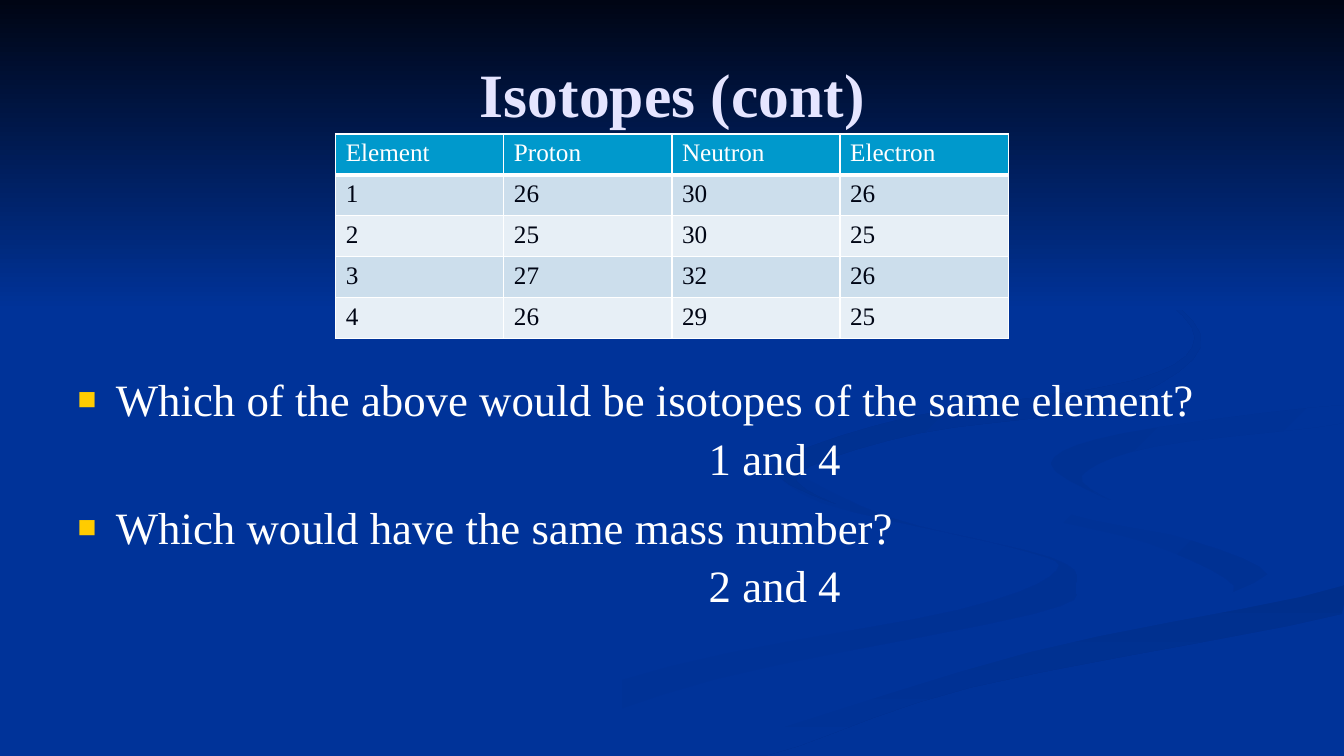
"""Build the "Isotopes (cont)" slide with a particle table, two questions and their answers."""
import lxml.etree
import pptx
import pptx.dml.color
import pptx.enum.shapes
import pptx.enum.text
import pptx.oxml.ns
import pptx.util

RGBColor = pptx.dml.color.RGBColor
Inches = pptx.util.Inches
Pt = pptx.util.Pt
qn = pptx.oxml.ns.qn

BLUE = RGBColor(0x00, 0x33, 0x99)
NIGHT = RGBColor(0x00, 0x05, 0x14)
SHADE = RGBColor(0x00, 0x31, 0x93)
DEEP_SHADE = RGBColor(0x00, 0x2F, 0x8C)
LAVENDER = RGBColor(0xE5, 0xE5, 0xFF)
WHITE = RGBColor(0xFF, 0xFF, 0xFF)
GOLD = RGBColor(0xFF, 0xCC, 0x00)
HEADER = RGBColor(0x00, 0x99, 0xCC)
BANDS = (RGBColor(0xE7, 0xEF, 0xF6), RGBColor(0xCC, 0xDE, 0xEC))
FONT = "Times New Roman"
WIDTH, HEIGHT = 13.33, 7.5
CURVE_STEPS = 5

TITLE = "Isotopes (cont)"
PARTICLES = [
    ("Element", "Proton", "Neutron", "Electron"),
    ("1", "26", "30", "26"),
    ("2", "25", "30", "25"),
    ("3", "27", "32", "26"),
    ("4", "26", "29", "25"),
]
QUESTIONS = [
    ("Which of the above would be isotopes of the same element?", 0),
    ("Which would have the same mass number?", 53),
]
ANSWERS = [("1 and 4", 4.22), ("2 and 4", 5.48)]

SWOOSHES = [
    ((BLUE, SHADE), 0, [
        (10.42, 5.53), (8.81, 5.13), (7.67, 4.59), (8.15, 4.99), (10.03, 5.43), (10.48, 5.66),
        (9.51, 6.05), (6.65, 6.61), (4, 7.49), (4.82, 7.49), (7.09, 6.74), (10.25, 6.09),
        (10.67, 5.81)]),
    ((BLUE, SHADE), 45, [
        (12.57, 5.7), (11.6, 5.3), (10.1, 4.98), (9.65, 4.64), (10.07, 5.05), (11.39, 5.39),
        (12.24, 5.81), (11.91, 6.05)]),
    ((DEEP_SHADE, BLUE), 90, [
        (6.71, 7.49), (7.62, 7.49), (9.63, 6.82), (13.31, 6.09), (13.31, 5.81), (10.19, 6.47),
        (7.98, 7.06)]),
    ((BLUE, BLUE), 0, [
        (9.66, 4.64), (10.57, 5.09), (12.06, 5.4), (12.57, 5.7), (11.24, 6.18), (8.84, 6.68),
        (6.36, 7.49), (6.93, 7.47), (10.21, 6.47), (13.32, 5.81), (13.32, 5.38), (11.55, 5.09),
        (10.42, 4.63), (11.34, 4.27), (13.32, 4.02), (13.32, 3.87), (10.77, 4.17)]),
    ((SHADE, BLUE), 45, [
        (10.42, 4.6), (11.01, 4.96), (10.73, 4.72), (11.45, 4.43), (13.31, 4.2), (13.31, 4.02),
        (11.13, 4.3)]),
    ((DEEP_SHADE, BLUE), 45, [
        (9.11, 4.3), (10.99, 4.02), (11.91, 3.44), (11.38, 2.83), (10.17, 2.33), (11.27, 2.79),
        (11.85, 3.35), (11.22, 3.78), (9.01, 4.14), (7.69, 4.62), (8.29, 5), (7.91, 4.7)]),
]


def write(paragraph, text, size=32, color=WHITE, bold=False, align=None):
    """Write one formatted run into a paragraph."""
    run = paragraph.add_run()
    run.text = text
    run.font.name = FONT
    run.font.size = Pt(size)
    run.font.bold = bold
    run.font.color.rgb = color
    paragraph.alignment = align


def blend(before, start, end, after, t):
    """Return a coordinate on the smooth curve from start to end."""
    rise, drop = (end - before) / 2, (after - start) / 2
    change = start - end
    return start + t * rise - t**2 * (3 * change + 2 * rise + drop) + t**3 * (2 * change + rise + drop)


def smooth_outline(knots):
    """Return the points of a closed smooth curve through the knots, kept on the slide."""
    outline = []
    for index in range(len(knots)):
        near = [knots[(index + offset) % len(knots)] for offset in (-1, 0, 1, 2)]
        for step in range(CURVE_STEPS):
            x, y = (blend(*axis, step / CURVE_STEPS) for axis in zip(*near))
            outline.append((Inches(min(x, WIDTH)), Inches(min(y, HEIGHT))))
    return outline


def paint(shape, colors, angle):
    """Fill a backdrop shape with one color or a gradient of two."""
    shape.shadow.inherit = False
    shape.line.fill.background()
    if colors[0] == colors[1]:
        shape.fill.solid()
        shape.fill.fore_color.rgb = colors[0]
        return
    shape.fill.gradient()
    shape.fill.gradient_angle = -angle % 360
    for position, (stop, color) in enumerate(zip(shape.fill.gradient_stops, colors)):
        stop.color.rgb = color
        stop.position = position


def add_backdrop(slide):
    """Draw the swooshes and the dark sky band."""
    for colors, angle, knots in SWOOSHES:
        outline = smooth_outline(knots)
        builder = slide.shapes.build_freeform(*outline[0])
        builder.add_line_segments(outline[1:], close=True)
        paint(builder.convert_to_shape(), colors, angle)
    sky = slide.shapes.add_shape(pptx.enum.shapes.MSO_SHAPE.RECTANGLE, 0, 0,
                                 Inches(WIDTH), Inches(3.08))
    paint(sky, (NIGHT, BLUE), 90)


def add_bullet(paragraph):
    """Give a paragraph a hanging gold square bullet."""
    properties = paragraph._p.get_or_add_pPr()
    properties.set("marL", str(Inches(0.38)))
    properties.set("indent", str(-Inches(0.38)))
    color = lxml.etree.SubElement(properties, qn("a:buClr"))
    lxml.etree.SubElement(color, qn("a:srgbClr"), val=str(GOLD))
    lxml.etree.SubElement(properties, qn("a:buSzPct"), val="70000")
    lxml.etree.SubElement(properties, qn("a:buFont"), typeface=FONT)
    lxml.etree.SubElement(properties, qn("a:buChar"), char="■")


def add_borders(cell, bottom):
    """Outline a cell in white with the given bottom width."""
    properties = cell._tc.get_or_add_tcPr()
    for side, width in (("L", 1), ("R", 1), ("T", 1), ("B", bottom)):
        border = lxml.etree.SubElement(properties, qn(f"a:ln{side}"), w=str(Pt(width)))
        fill = lxml.etree.SubElement(border, qn("a:solidFill"))
        lxml.etree.SubElement(fill, qn("a:srgbClr"), val=str(WHITE))


def place(shape, left, top, width, height):
    """Move and size a shape in inches."""
    shape.left, shape.top = Inches(left), Inches(top)
    shape.width, shape.height = Inches(width), Inches(height)


def add_particles(slide):
    """Add the table of particle counts."""
    frame = slide.shapes.add_table(len(PARTICLES), len(PARTICLES[0]), Inches(3.33),
                                   Inches(1.33), Inches(6.67), Inches(2.03))
    table = frame.table
    table.first_row = table.horz_banding = False
    for row, counts in enumerate(PARTICLES):
        for column, count in enumerate(counts):
            cell = table.cell(row, column)
            add_borders(cell, 1 if row else 3)
            cell.fill.solid()
            cell.fill.fore_color.rgb = BANDS[row % 2] if row else HEADER
            write(cell.text_frame.paragraphs[0], count, size=18, color=NIGHT if row else WHITE)


def main():
    """Assemble and save the slide."""
    deck = pptx.Presentation()
    deck.slide_width, deck.slide_height = Inches(WIDTH), Inches(HEIGHT)
    slide = deck.slides.add_slide(deck.slide_layouts[1])
    slide.background.fill.solid()
    slide.background.fill.fore_color.rgb = BLUE
    title, questions = slide.placeholders
    add_backdrop(slide)
    for placeholder in (title, questions):
        slide.shapes.element.append(placeholder.element)
        placeholder.text_frame.auto_size = pptx.enum.text.MSO_AUTO_SIZE.NONE

    place(title, 0.67, 0.3, 12, 1.25)
    title.text_frame.vertical_anchor = pptx.enum.text.MSO_ANCHOR.MIDDLE
    write(title.text_frame.paragraphs[0], TITLE, size=44, color=LAVENDER, bold=True,
          align=pptx.enum.text.PP_ALIGN.CENTER)

    place(questions, 0.67, 1.75, 12, 4.95)
    body = questions.text_frame
    body.margin_top = Inches(1.94)
    for index, (question, gap) in enumerate(QUESTIONS):
        paragraph = body.add_paragraph() if index else body.paragraphs[0]
        paragraph.space_before = Pt(gap)
        add_bullet(paragraph)
        write(paragraph, question)

    add_particles(slide)
    for answer, top in ANSWERS:
        box = slide.shapes.add_textbox(Inches(6.93), Inches(top), Inches(2.75), Inches(0.64))
        box.text_frame.word_wrap = True
        write(box.text_frame.paragraphs[0], answer)
    deck.save("out.pptx")


if __name__ == "__main__":
    main()
